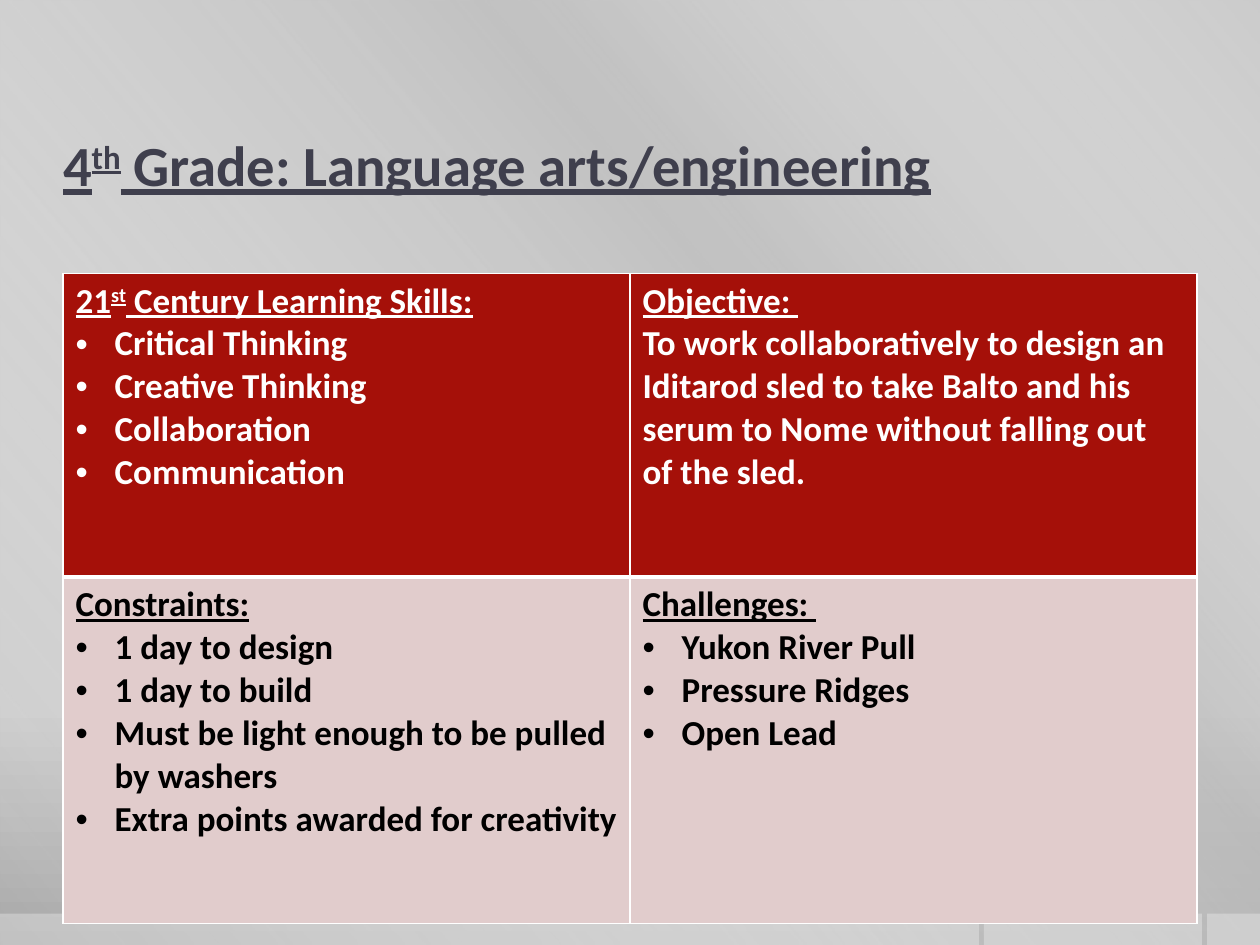
"""Builds the fourth-grade language arts and engineering lesson slide."""
from dataclasses import dataclass

from lxml.etree import SubElement
from pptx import Presentation
from pptx.dml.color import RGBColor
from pptx.enum.shapes import MSO_SHAPE
from pptx.enum.text import MSO_ANCHOR, MSO_AUTO_SIZE, PP_ALIGN
from pptx.oxml import parse_xml
from pptx.oxml.ns import nsdecls, qn
from pptx.util import Inches, Pt


@dataclass(frozen=True)
class Theme:
    font: str = "Calibri"
    title_size: float = 32.4
    body_size: float = 20
    title: str = "3F3F4D"
    light: str = "FFFFFF"
    dark: str = "000000"
    header_fill: str = "A51009"
    body_fill: str = "E1CCCC"


@dataclass(frozen=True)
class Stop:
    position: int
    color: str
    alpha: int = 100


@dataclass(frozen=True)
class Piece:
    text: str
    superscript: bool = False


@dataclass(frozen=True)
class Panel:
    heading: tuple[Piece, ...]
    lines: tuple[str, ...]
    bulleted: bool = True


THEME = Theme()
BACKDROP = (Stop(0, "CBCBCB"), Stop(76, "C8C8C8"), Stop(100, "A7A7A7"))
SHEEN = (Stop(0, "FFFFFF", 0), Stop(34, "BFBFBF", 61),
         Stop(38, "BFBFBF", 76), Stop(100, "FFFFFF", 0))
FLOOR_TILES = ((0, 7.77), (7.81, 1.73), (9.58, 0.42))
TITLE = (Piece("4"), Piece("th", True), Piece(" Grade: Language arts/engineering"))
ROW_HEIGHTS = (2.41, 2.75)
PANELS = (
    (Panel((Piece("21"), Piece("st", True), Piece(" Century Learning Skills:")),
           ("Critical Thinking", "Creative Thinking", "Collaboration", "Communication")),
     Panel((Piece("Objective: "),),
           ("To work collaboratively to design an Iditarod sled to take Balto "
            "and his serum to Nome without falling out of the sled.",), False)),
    (Panel((Piece("Constraints:"),),
           ("1 day to design", "1 day to build",
            "Must be light enough to be pulled by washers",
            "Extra points awarded for creativity")),
     Panel((Piece("Challenges: "),),
           ("Yukon River Pull", "Pressure Ridges", "Open Lead"))),
)


def set_gradient(fill, properties, stops: tuple[Stop, ...], angle: int) -> None:
    """Give a fill the listed stops at a clockwise angle."""
    fill.gradient()
    stop_xml = "".join(
        f'<a:gs pos="{stop.position * 1000}"><a:srgbClr val="{stop.color}">'
        f'<a:alpha val="{stop.alpha * 1000}"/></a:srgbClr></a:gs>' for stop in stops)
    gradient = parse_xml(
        f'<a:gradFill {nsdecls("a")} rotWithShape="1"><a:gsLst>{stop_xml}</a:gsLst>'
        f'<a:lin ang="{angle * 60000}" scaled="0"/></a:gradFill>')
    properties.replace(properties.find(qn("a:gradFill")), gradient)


def add_panel_shape(slide, left: float, top: float, width: float, height: float):
    """Add a rectangle without outline or shadow."""
    rectangle = slide.shapes.add_shape(
        MSO_SHAPE.RECTANGLE, Inches(left), Inches(top), Inches(width), Inches(height))
    rectangle.shadow.inherit = False
    rectangle.line.fill.background()
    return rectangle


def draw_backdrop(slide) -> None:
    """Draw the grey backdrop, its diagonal sheen and the floor tiles."""
    background = slide.background.fill
    background.solid()
    set_gradient(background, slide.element.cSld.find(qn("p:bg")).find(qn("p:bgPr")),
                 BACKDROP, 90)
    sheen = add_panel_shape(slide, 0, 0, 10, 7.5)
    set_gradient(sheen.fill, sheen.element.spPr, SHEEN, 140)
    for left, width in FLOOR_TILES:
        tile = add_panel_shape(slide, left, 7.25, width, 0.25)
        tile.fill.solid()
        tile.fill.fore_color.rgb = RGBColor.from_string(THEME.light)
        color = tile.element.spPr.find(qn("a:solidFill"))[0]
        SubElement(color, qn("a:alpha")).set("val", "30000")


def add_piece(paragraph, piece: Piece, size: float, color: str, underline: bool) -> None:
    """Append one bold run to a paragraph."""
    run = paragraph.add_run()
    run.text = piece.text
    font = run.font
    font.name, font.size = THEME.font, Pt(size)
    font.bold, font.underline = True, underline
    font.color.rgb = RGBColor.from_string(color)
    if piece.superscript:
        run._r.get_or_add_rPr().set("baseline", "30000")


def add_bullet(paragraph) -> None:
    """Give a paragraph a hanging round bullet."""
    properties = paragraph._p.get_or_add_pPr()
    properties.set("marL", str(Inches(0.31)))
    properties.set("indent", str(Inches(-0.31)))
    SubElement(properties, qn("a:buFont")).set("typeface", "Arial")
    SubElement(properties, qn("a:buChar")).set("char", "•")


def set_borders(cell, bottom_width: float) -> None:
    """Outline a cell in white with the given bottom width."""
    sides = (("lnL", 1), ("lnR", 1), ("lnT", 1), ("lnB", bottom_width))
    for index, (side, width) in enumerate(sides):
        border = parse_xml(
            f'<a:{side} {nsdecls("a")} w="{Pt(width)}"><a:solidFill>'
            f'<a:srgbClr val="{THEME.light}"/></a:solidFill></a:{side}>')
        cell._tc.get_or_add_tcPr().insert(index, border)


def fill_cell(cell, panel: Panel, color: str, fill: str, bottom_width: float) -> None:
    """Write one panel into a table cell."""
    cell.fill.solid()
    cell.fill.fore_color.rgb = RGBColor.from_string(fill)
    set_borders(cell, bottom_width)
    heading = cell.text_frame.paragraphs[0]
    for piece in panel.heading:
        add_piece(heading, piece, THEME.body_size, color, True)
    for line in panel.lines:
        paragraph = cell.text_frame.add_paragraph()
        if panel.bulleted:
            add_bullet(paragraph)
        add_piece(paragraph, Piece(line), THEME.body_size, color, False)


def draw_title(slide) -> None:
    """Place and write the slide title."""
    title = slide.shapes.title
    title.left, title.top = Inches(0.5), Inches(1.03)
    title.width, title.height = Inches(9), Inches(1.05)
    frame = title.text_frame
    frame.auto_size = MSO_AUTO_SIZE.NONE
    frame.vertical_anchor = MSO_ANCHOR.TOP
    frame.margin_left = frame.margin_right = frame.margin_top = 0
    heading = frame.paragraphs[0]
    heading.alignment = PP_ALIGN.LEFT
    for piece in TITLE:
        add_piece(heading, piece, THEME.title_size, THEME.title, True)


def draw_table(slide) -> None:
    """Draw the two-by-two lesson table."""
    table = slide.shapes.add_table(
        2, 2, Inches(0.5), Inches(2.17), Inches(9), Inches(sum(ROW_HEIGHTS))).table
    styles = ((THEME.light, THEME.header_fill, 3), (THEME.dark, THEME.body_fill, 1))
    for row, (panels, height, style) in enumerate(zip(PANELS, ROW_HEIGHTS, styles)):
        table.rows[row].height = Inches(height)
        for column, panel in enumerate(panels):
            fill_cell(table.cell(row, column), panel, *style)


def main() -> None:
    """Build and save the slide."""
    presentation = Presentation()
    presentation.slide_width, presentation.slide_height = Inches(10), Inches(7.5)
    slide = presentation.slides.add_slide(presentation.slide_layouts[5])
    draw_backdrop(slide)
    draw_title(slide)
    slide.shapes._spTree.append(slide.shapes.title.element)
    draw_table(slide)
    presentation.save("out.pptx")


if __name__ == "__main__":
    main()
